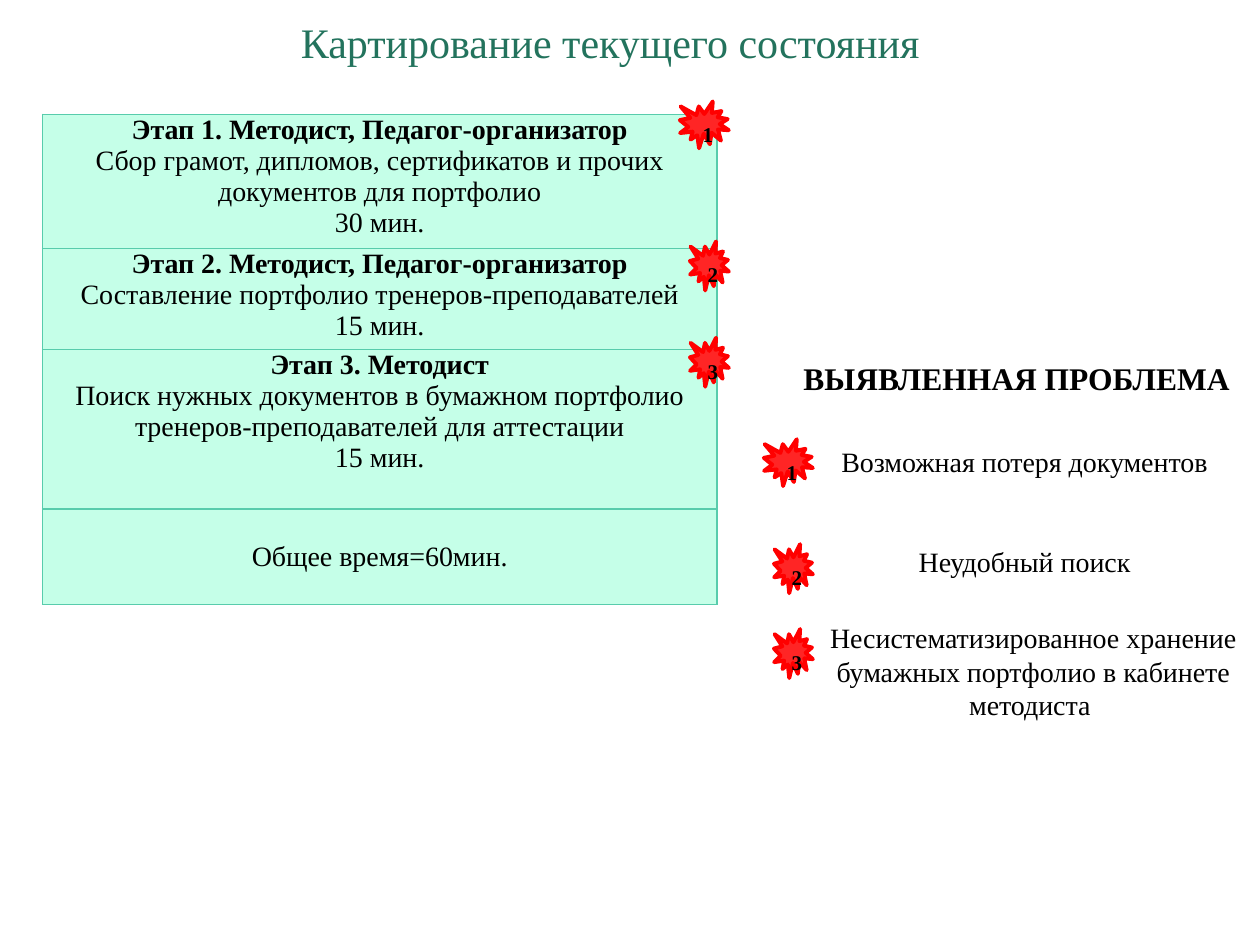
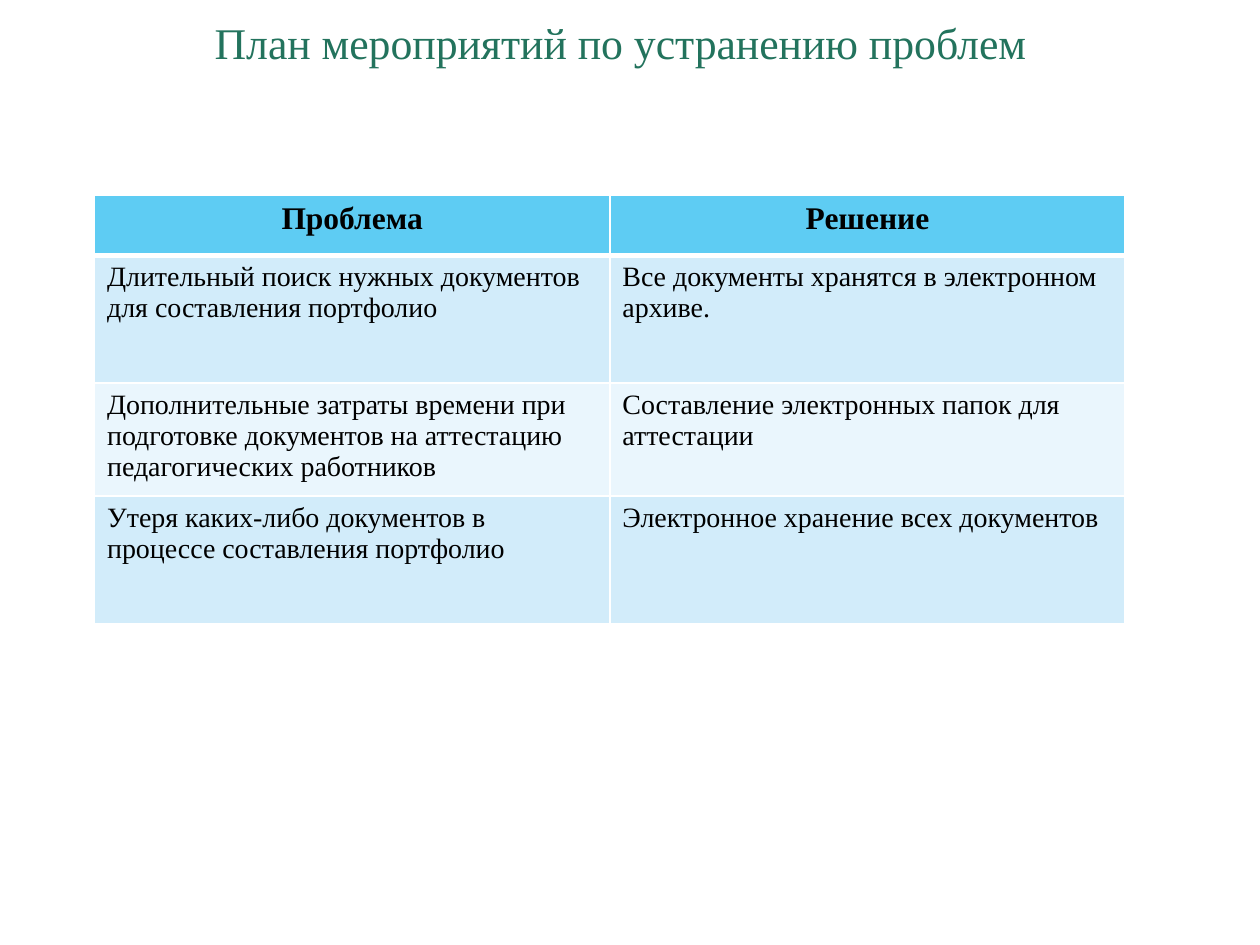
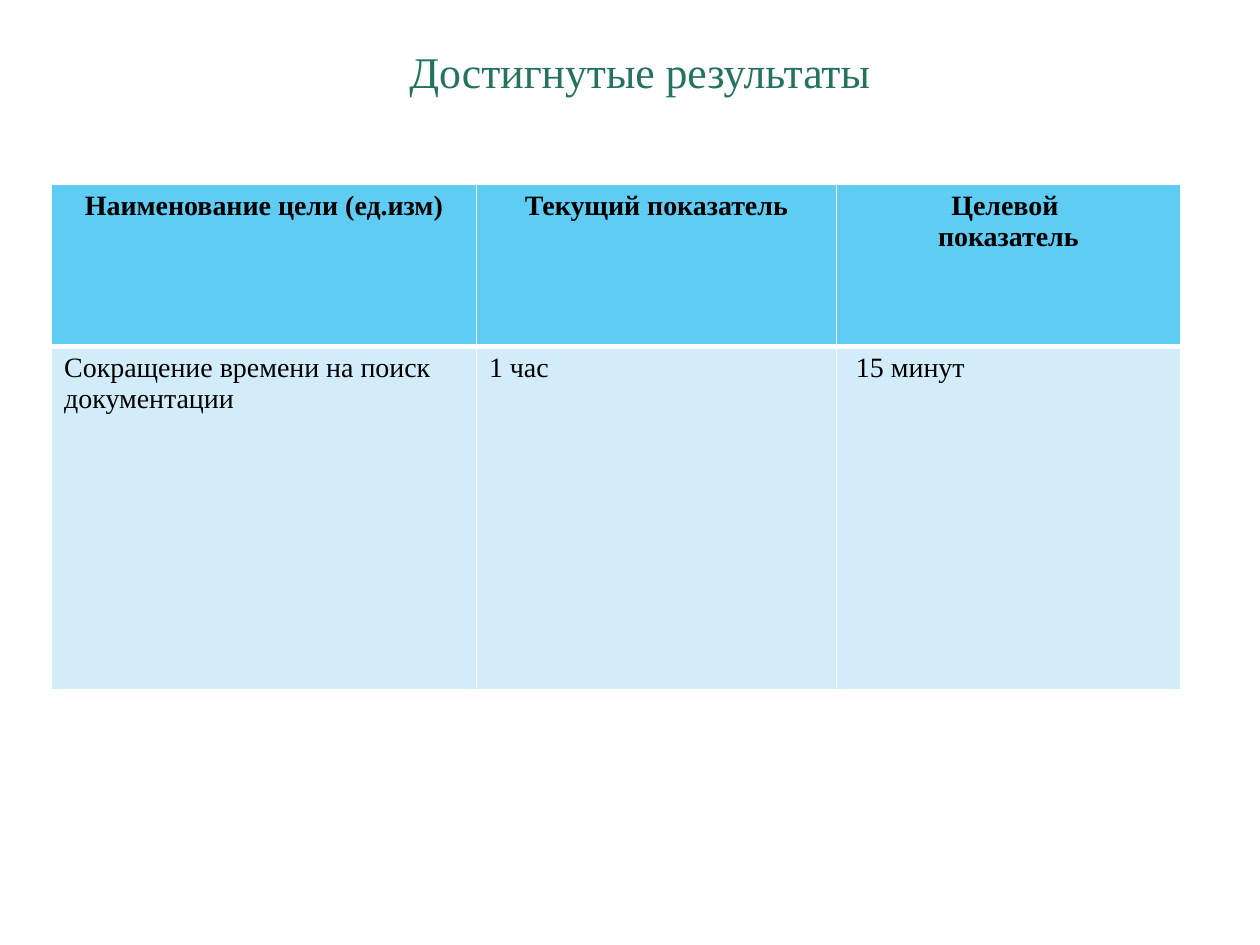
from lxml import etree
from pptx import Presentation
from pptx.dml.color import RGBColor
from pptx.enum.shapes import MSO_SHAPE
from pptx.enum.text import MSO_ANCHOR, PP_ALIGN
from pptx.oxml.ns import qn
from pptx.util import Pt

# Shared style
FONT = "Times New Roman"
BLACK = RGBColor(0x00, 0x00, 0x00)
WHITE = RGBColor(0xFF, 0xFF, 0xFF)
TITLE_GREEN = RGBColor(0x23, 0x73, 0x5D)
MINT = RGBColor(0xC5, 0xFF, 0xE8)
MINT_EDGE = RGBColor(0x58, 0xCC, 0xAC)
HEADER_BLUE = RGBColor(0x5E, 0xCC, 0xF3)
BAND_DARK = RGBColor(0xD2, 0xEC, 0xFA)
BAND_LIGHT = RGBColor(0xEA, 0xF6, 0xFD)
BURST_RED = RGBColor(0xFF, 0x25, 0x25)
BURST_EDGE = RGBColor(0xFF, 0x00, 0x00)

CENTER, LEFT = PP_ALIGN.CENTER, PP_ALIGN.LEFT
TOP, MIDDLE = MSO_ANCHOR.TOP, MSO_ANCHOR.MIDDLE
BURST = MSO_SHAPE.EXPLOSION1

# Content
STAGES = [
    ["Этап 1. Методист, Педагог-организатор",
     "Сбор грамот, дипломов, сертификатов и прочих документов для портфолио",
     "30 мин."],
    ["Этап 2. Методист, Педагог-организатор",
     "Составление портфолио тренеров-преподавателей",
     "15 мин."],
    ["Этап 3. Методист",
     "Поиск нужных документов в бумажном портфолио "
     "тренеров-преподавателей для аттестации",
     "15 мин."],
]
TOTAL_TIME = "Общее время=60мин."
STAGE_HEIGHTS = [73, 55, 91.25, 54.75]

# Each problem: text, left and top of the text
PROBLEMS = [
    ("Возможная потеря документов ", 442, 230.5),
    ("Неудобный поиск ", 442, 287.5),
    ("Несистематизированное хранение бумажных портфолио "
     "в кабинете методиста ", 445, 350.5),
]
BURST_SIZES = [(28, 26.75), (22.25, 28), (22.25, 28)]
STAGE_BURST_RIGHT, STAGE_BURST_TOPS = 416.5, [58, 138, 193]
PROBLEM_BURST_RIGHT, PROBLEM_BURST_TOPS = 464.5, [251, 311, 359.5]

PLAN = [
    ["Проблема", "Решение"],
    ["Длительный поиск нужных документов для составления портфолио",
     "Все документы хранятся в электронном архиве."],
    ["Дополнительные затраты времени при подготовке документов "
     "на аттестацию педагогических работников",
     "Составление электронных папок для аттестации"],
    ["Утеря каких-либо документов в процессе составления портфолио",
     "Электронное хранение всех документов"],
]
RESULTS = [
    ["Наименование цели (ед.изм)", "Текущий показатель",
     "Целевой \nпоказатель"],
    ["Сокращение времени на поиск документации", "1 час", " 15 минут"],
]


def write(frame, lines, size, color=BLACK, bold_lines=0, align=CENTER):
    """Write one paragraph per line; the first bold_lines are bold."""
    for i, line in enumerate(lines):
        paragraph = frame.paragraphs[0] if i == 0 else frame.add_paragraph()
        paragraph.alignment = align
        run = paragraph.add_run()
        run.text = line
        run.font.name = FONT
        run.font.size = Pt(size)
        run.font.bold = i < bold_lines
        run.font.color.rgb = color
        # Keep the paragraph mark as small as its text
        mark = etree.SubElement(paragraph._p, qn("a:endParaRPr"),
                                sz=str(size * 100))
        etree.SubElement(mark, qn("a:latin"), typeface=FONT)


def add_text(slide, box, text, size, inset=None, wrap=True, anchor=MIDDLE,
             **style):
    frame = slide.shapes.add_textbox(*map(Pt, box)).text_frame
    frame.word_wrap = wrap
    frame.vertical_anchor = anchor
    if inset is not None:
        frame.margin_left = frame.margin_right = Pt(inset)
        frame.margin_top = frame.margin_bottom = Pt(inset)
    write(frame, [text], size, **style)


def add_title(slide, text, box, size=25):
    add_text(slide, box, text, size, color=TITLE_GREEN)


def add_burst(slide, number, right, top):
    width, height = BURST_SIZES[number - 1]
    burst = slide.shapes.add_shape(
        BURST, Pt(right - width), Pt(top), Pt(width), Pt(height))
    burst.shadow.inherit = False
    burst.fill.solid()
    burst.fill.fore_color.rgb = BURST_RED
    burst.line.color.rgb = BURST_EDGE
    burst.line.width = Pt(2.25)
    burst.text_frame.vertical_anchor = TOP
    write(burst.text_frame, [str(number)], 12, bold_lines=1)


def style_cell(cell, fill, edge, widths):
    """Fill a cell and draw its left, right, top and bottom borders."""
    properties = cell._tc.get_or_add_tcPr()
    for side, width in zip("LRTB", widths):
        border = etree.SubElement(properties, qn(f"a:ln{side}"),
                                  w=str(int(Pt(width))))
        solid = etree.SubElement(border, qn("a:solidFill"))
        etree.SubElement(solid, qn("a:srgbClr"), val=str(edge))
    cell.fill.solid()
    cell.fill.fore_color.rgb = fill


def add_grid(slide, left, top, widths, heights):
    table = slide.shapes.add_table(
        len(heights), len(widths), Pt(left), Pt(top),
        Pt(sum(widths)), Pt(sum(heights))).table
    table.first_row = table.horz_banding = False
    for column, width in zip(table.columns, widths):
        column.width = Pt(width)
    for row, height in zip(table.rows, heights):
        row.height = Pt(height)
    return table


def add_stage_table(slide):
    table = add_grid(slide, 24.25, 65.25, [385.5], STAGE_HEIGHTS)
    for r, lines in enumerate(STAGES + [[TOTAL_TIME]]):
        cell = table.cell(r, 0)
        is_total = r == len(STAGES)
        cell.margin_left = cell.margin_right = Pt(5)
        cell.margin_top = cell.margin_bottom = 0
        cell.vertical_anchor = MIDDLE if is_total else TOP
        style_cell(cell, MINT, MINT_EDGE, [0.75] * 4)
        write(cell.text_frame, lines, 16, bold_lines=0 if is_total else 1)


def add_banded_table(slide, rows, left, top, widths, heights, header_size):
    table = add_grid(slide, left, top, widths, heights)
    for r, texts in enumerate(rows):
        is_header = r == 0
        fill = HEADER_BLUE if is_header else (BAND_LIGHT, BAND_DARK)[r % 2]
        # The rule under the header is thicker than the rest
        edges = [1, 1, 3 if r == 1 else 1, 3 if is_header else 1]
        for c, text in enumerate(texts):
            cell = table.cell(r, c)
            style_cell(cell, fill, WHITE, edges)
            lines = text.split("\n")
            write(cell.text_frame, lines, header_size if is_header else 16,
                  bold_lines=len(lines) if is_header else 0,
                  align=CENTER if is_header else LEFT)


def build_current_state(slide):
    add_title(slide, "Картирование текущего состояния",
              (0, -24.5, 697.5, 96.5), size=24)
    add_stage_table(slide)
    for number, top in enumerate(STAGE_BURST_TOPS, 1):
        add_burst(slide, number, STAGE_BURST_RIGHT, top)

    # Problems found
    add_text(slide, (450.75, 201.5, 260.5, 29), "ВЫЯВЛЕННАЯ ПРОБЛЕМА", 18,
             wrap=False, anchor=TOP, bold_lines=1)
    for number, top in enumerate(PROBLEM_BURST_TOPS, 1):
        add_burst(slide, number, PROBLEM_BURST_RIGHT, top)
    for text, left, top in PROBLEMS:
        add_text(slide, (left, top, 291, 66), text, 16, inset=9.5)


def build_plan(slide):
    add_title(slide, "План мероприятий по устранению проблем",
              (20, -1.5, 669, 51))
    add_banded_table(slide, PLAN, 54, 111.5, [294.5] * 2,
                     [34.5, 72.75, 60.5, 72.75], header_size=18)


def build_results(slide):
    add_title(slide, "Достигнутые результаты", (31, 15, 669, 51))
    add_banded_table(slide, RESULTS, 29.5, 105.25, [242.75, 205.75, 196.5],
                     [92.75, 196.25], header_size=16)


def main():
    deck = Presentation()
    deck.slide_width, deck.slide_height = Pt(720), Pt(540)
    blank = deck.slide_layouts[6]
    for build in (build_current_state, build_plan, build_results):
        build(deck.slides.add_slide(blank))
    deck.save("out.pptx")


if __name__ == "__main__":
    main()
